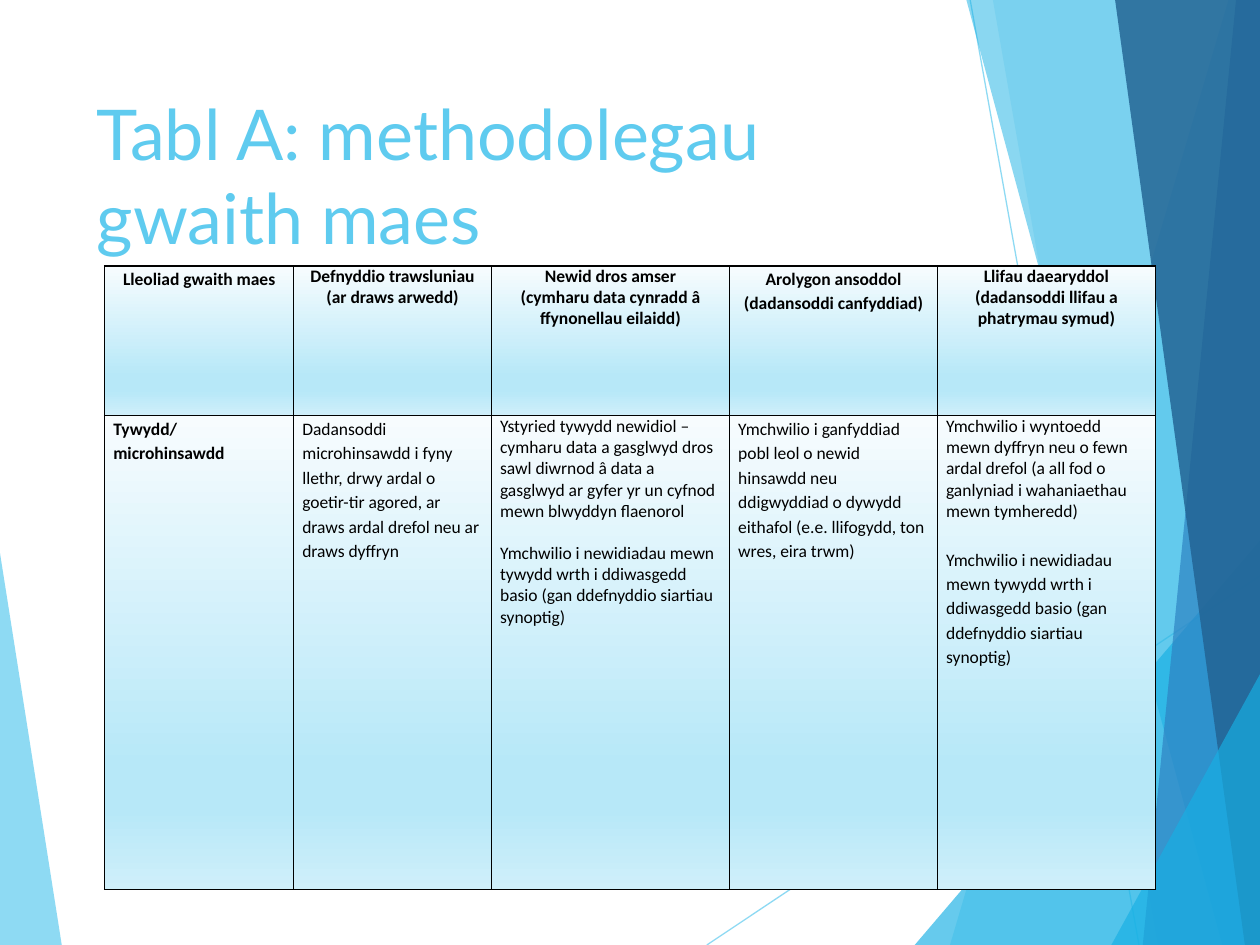
from lxml import etree
from pptx import Presentation
from pptx.dml.color import RGBColor
from pptx.enum.shapes import MSO_CONNECTOR
from pptx.enum.text import MSO_ANCHOR, PP_ALIGN
from pptx.oxml.ns import qn
from pptx.util import Inches, Pt

STRAIGHT = MSO_CONNECTOR.STRAIGHT
TOP = MSO_ANCHOR.TOP
LEFT, CENTER = PP_ALIGN.LEFT, PP_ALIGN.CENTER

COLORS = {"sky": "5FCBEF", "cyan": "17B0E4", "blue": "2E83C3", "navy": "226292", "black": "000000"}
CELL_STOPS = [(0, "F7FCFE"), (74, "B7E8F8"), (83, "B7E8F8"), (100, "CFEFFA")]
BORDERS = ("a:lnL", "a:lnR", "a:lnT", "a:lnB")

LEFT_FACET = ([(0, 4.39), (0.49, 7.5), (0, 7.5)], "sky", 70)
RIGHT_FACETS = [
    ([(9.75, 0), (7.54, 7.5), (10, 7.5), (10, 0)], "sky", 36),
    ([(7.88, 0), (9.19, 7.5), (10, 7.5), (10, 0)], "sky", 20),
    ([(7.26, 7.5), (10, 4.29), (10, 7.5)], "cyan", 66),
    ([(7.67, 0), (9.7, 7.5), (10, 7.5), (10, 0)], "cyan", 50),
    ([(9.81, 0), (9.07, 7.5), (10, 7.5), (10, 0)], "blue", 70),
    ([(8.85, 0), (9.88, 7.5), (10, 7.5), (10, 0)], "navy", 82),
    ([(8.82, 7.5), (10, 5.35), (10, 7.5)], "cyan", 66),
]
RAYS = [((5.61, 7.5), (10, 4.57)), ((7.7, 0), (9.04, 7.5))]

COL_WIDTHS = [1.5, 1.57, 1.89, 1.65, 1.73]
ROW_HEIGHTS = [1.19, 3.76]
LOOSE = 1.15
SYNOPTIC = ("Ymchwilio i newidiadau mewn tywydd wrth i ddiwasgedd basio "
            "(gan ddefnyddio siartiau synoptig)")
HEADERS = [
    [("Lleoliad gwaith maes", {"spacing": LOOSE})],
    [("Defnyddio trawsluniau", {}), ("(ar draws arwedd)", {})],
    [("Newid dros amser", {}), ("(cymharu data cynradd â ffynonellau eilaidd)", {})],
    [("Arolygon ansoddol (dadansoddi canfyddiad)", {"spacing": LOOSE})],
    [("Llifau daearyddol", {}), ("(dadansoddi llifau a phatrymau symud)", {})],
]
WEATHER = [
    [("Tywydd/microhinsawdd", {"spacing": LOOSE, "bold": True})],
    [("Dadansoddi microhinsawdd i fyny llethr, drwy ardal o goetir-tir agored, "
      "ar draws ardal drefol neu ar draws dyffryn", {"spacing": LOOSE})],
    [("Ystyried tywydd newidiol – cymharu data a gasglwyd dros sawl diwrnod â data "
      "a gasglwyd ar gyfer yr un cyfnod mewn blwyddyn flaenorol", {}),
     (SYNOPTIC, {"before": 12})],
    [("Ymchwilio i ganfyddiad pobl leol o newid hinsawdd neu ddigwyddiad o dywydd "
      "eithafol (e.e. llifogydd, ton wres, eira trwm)", {"spacing": LOOSE})],
    [("Ymchwilio i wyntoedd mewn dyffryn neu o fewn ardal drefol "
      "(a all fod o ganlyniad i wahaniaethau mewn tymheredd)", {}),
     (SYNOPTIC, {"spacing": LOOSE, "before": 14})],
]


def set_alpha(fill, color, percent):
    """Make the fill solid in a named colour with the given opacity."""
    fill.solid()
    fill.fore_color.rgb = RGBColor.from_string(COLORS[color])
    return percent


def add_alpha(element, percent):
    """Give every RGB colour inside the element's properties an opacity."""
    for clr in element.spPr.iter(qn("a:srgbClr")):
        etree.SubElement(clr, qn("a:alpha"), val=str(percent * 1000))


def add_facet(s, points, color, opacity):
    """Draw one translucent background polygon."""
    corners = [(Inches(x), Inches(y)) for x, y in points]
    builder = s.shapes.build_freeform(*corners[0], scale=1.0)
    builder.add_line_segments(corners[1:], close=True)
    sp = builder.convert_to_shape()
    sp.shadow.inherit = False
    sp.line.fill.background()
    set_alpha(sp.fill, color, opacity)
    add_alpha(sp._element, opacity)


def add_ray(s, start, end):
    """Draw one thin translucent background line."""
    ends = [Inches(v) for v in (*start, *end)]
    line = s.shapes.add_connector(STRAIGHT, *ends)
    line.line.width = Pt(0.75)
    set_alpha(line.line.fill, "sky", 70)
    add_alpha(line._element, 70)
    etree.SubElement(line._element.spPr, qn("a:effectLst"))


def write(p, text, size=10, font="Calibri", color="black", bold=False,
          align=LEFT, spacing=1.0, before=0):
    """Put formatted text into a paragraph."""
    p.alignment = align
    p.line_spacing = spacing
    p.space_before = Pt(before)
    r = p.add_run()
    r.text = text
    r.font.size = Pt(size)
    r.font.name = font
    r.font.bold = bold
    r.font.color.rgb = RGBColor.from_string(COLORS[color])


def add_title(s, text):
    """Add the slide title."""
    box = s.shapes.add_textbox(Inches(0.67), Inches(0.67), Inches(6.94), Inches(1.44))
    tf = box.text_frame
    tf.word_wrap = True
    tf.vertical_anchor = TOP
    write(tf.paragraphs[0], text, size=40, font="Lato", color="sky")


def style_cell(cell):
    """Apply margins, black borders and the vertical gradient to a cell."""
    cell.margin_left = cell.margin_right = Inches(0.07)
    cell.margin_top = cell.margin_bottom = 0
    tc_pr = cell._tc.get_or_add_tcPr()
    for tag in BORDERS:
        ln = etree.SubElement(tc_pr, qn(tag), w=str(Pt(1)))
        solid = etree.SubElement(ln, qn("a:solidFill"))
        etree.SubElement(solid, qn("a:srgbClr"), val=COLORS["black"])
    grad = etree.SubElement(tc_pr, qn("a:gradFill"), rotWithShape="1")
    stops = etree.SubElement(grad, qn("a:gsLst"))
    for position, color in CELL_STOPS:
        gs = etree.SubElement(stops, qn("a:gs"), pos=str(position * 1000))
        etree.SubElement(gs, qn("a:srgbClr"), val=color)
    etree.SubElement(grad, qn("a:lin"), ang="5400000", scaled="0")


def fill_cell(cell, paragraphs, **defaults):
    """Write a list of paragraphs into a styled cell."""
    style_cell(cell)
    tf = cell.text_frame
    for i, (text, extra) in enumerate(paragraphs):
        p = tf.add_paragraph() if i else tf.paragraphs[0]
        write(p, text, **{**defaults, **extra})


def add_methods_table(s):
    """Add the table of fieldwork methods."""
    frame = s.shapes.add_table(len(ROW_HEIGHTS), len(COL_WIDTHS), Inches(0.83), Inches(2.11),
                               Inches(sum(COL_WIDTHS)), Inches(sum(ROW_HEIGHTS)))
    table = frame.table
    table.horz_banding = False
    for column, width in zip(table.columns, COL_WIDTHS):
        column.width = Inches(width)
    for row, height in zip(table.rows, ROW_HEIGHTS):
        row.height = Inches(height)
    for c, (header, weather) in enumerate(zip(HEADERS, WEATHER)):
        fill_cell(table.cell(0, c), header, bold=True, align=CENTER)
        fill_cell(table.cell(1, c), weather)


def main():
    """Build the slide and save it."""
    prs = Presentation()
    prs.slide_width, prs.slide_height = Inches(10), Inches(7.5)
    s = prs.slides.add_slide(prs.slide_layouts[6])
    add_facet(s, *LEFT_FACET)
    for start, end in RAYS:
        add_ray(s, start, end)
    for facet in RIGHT_FACETS:
        add_facet(s, *facet)
    add_title(s, "Tabl A: methodolegau gwaith maes")
    add_methods_table(s)
    prs.save("out.pptx")


if __name__ == "__main__":
    main()
